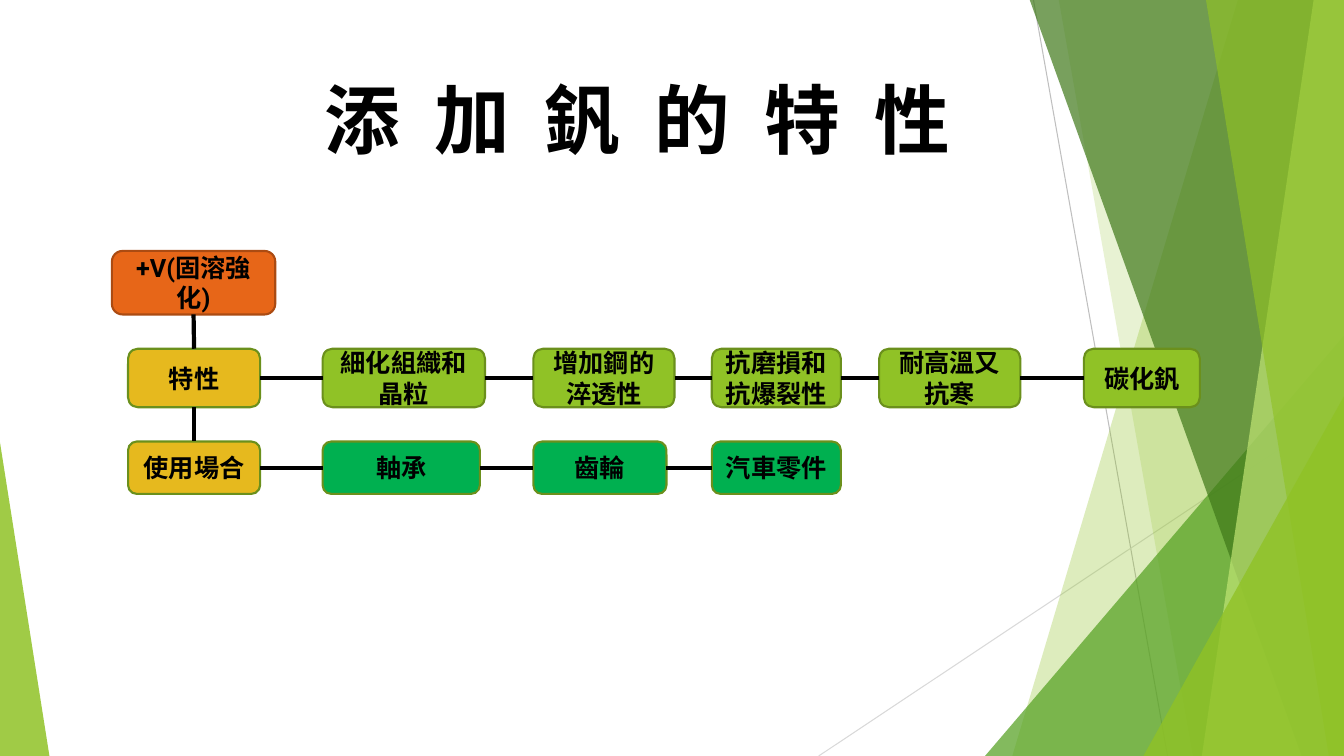
from lxml import etree
from pptx import Presentation
from pptx.dml.color import RGBColor
from pptx.enum.shapes import MSO_CONNECTOR, MSO_SHAPE
from pptx.enum.text import MSO_ANCHOR, MSO_AUTO_SIZE, PP_ALIGN
from pptx.oxml.ns import qn
from pptx.util import Inches, Pt

COLORS = {
    "black": "000000", "gray": "BFBFBF", "pale gray": "D9D9D9",
    "lime": "90C226", "light lime": "C0E474", "green": "54A021",
    "dark green": "3F7819", "lime edge": "6B901C", "gold": "E6B91E",
    "emerald": "00B050", "orange": "E76618", "orange edge": "AB4B12",
}
TOP, RIGHT, BOTTOM, LEFT = -0.01, 13.33, 7.5, 0
SITE_TOP, SITE_LEFT, SITE_BOTTOM, SITE_RIGHT = range(4)

deck = Presentation()
deck.slide_width, deck.slide_height = Inches(13.33), Inches(7.5)
page = deck.slides.add_slide(deck.slide_layouts[5])


def paint(shape, color, opacity=100, edge=None):
    """Fill a shape, with an opacity in percent and an optional outline."""
    shape.shadow.inherit = False
    shape.fill.solid()
    shape.fill.fore_color.rgb = RGBColor.from_string(COLORS[color])
    if opacity < 100:
        tint = shape.fill._xPr.find(qn("a:solidFill"))[0]
        etree.SubElement(tint, qn("a:alpha"), val=str(opacity * 1000))
    if edge:
        shape.line.color.rgb = RGBColor.from_string(COLORS[edge])
        shape.line.width = Pt(1.5)
    else:
        shape.line.fill.background()


def add_line(start, end, color, width):
    line = page.shapes.add_connector(
        MSO_CONNECTOR.STRAIGHT, *(Inches(value) for value in start + end))
    line.line.color.rgb = RGBColor.from_string(COLORS[color])
    line.line.width = Pt(width)
    etree.SubElement(line._element.spPr, qn("a:effectLst"))
    return line


# Backdrop: thin lines, then overlapping translucent facets
add_line((10.25, 0), (11.58, BOTTOM), "gray", 0.75)
add_line((RIGHT, 4.03), (8.12, BOTTOM), "pale gray", 0.75)

# A band has its left corners at (top x, bottom x) and runs to the right edge;
# a triangle has left, top, width and its apex side.
facets = [
    ("band", (12.28, 10.04), "lime", 30),
    ("band", (10.5, 11.83), "lime", 20),
    ("triangle", (9.77, 3.33, 3.56, 1), "green", 72),
    ("band", (10.21, 12.91), "dark green", 70),
    ("band", (13.03, 11.92), "light lime", 70),
    ("band", (11.96, 13.18), "lime", 65),
    ("triangle", (11.34, 3.93, 1.99, 1), "lime", 80),
    ("triangle", (LEFT, 4.39, 0.49, 0), "lime", 85),
]
for kind, geometry, color, opacity in facets:
    if kind == "band":
        top_x, bottom_x = geometry
        outline = page.shapes.build_freeform(Inches(top_x), Inches(TOP))
        corners = [(RIGHT, TOP), (RIGHT, BOTTOM), (bottom_x, BOTTOM)]
        outline.add_line_segments([(Inches(x), Inches(y)) for x, y in corners])
        facet = outline.convert_to_shape()
    else:
        left, top, width, apex = geometry
        facet = page.shapes.add_shape(
            MSO_SHAPE.ISOSCELES_TRIANGLE, Inches(left), Inches(top),
            Inches(width), Inches(BOTTOM - top))
        facet.adjustments[0] = apex
    paint(facet, color, opacity)

# Title
title = page.shapes.title
title.left, title.top = Inches(0), Inches(0.67)
title.width, title.height = Inches(12.64), Inches(1.44)
title.text_frame.auto_size = MSO_AUTO_SIZE.NONE
title.text_frame.vertical_anchor = MSO_ANCHOR.TOP
para = title.text_frame.paragraphs[0]
para.alignment = PP_ALIGN.CENTER
span = para.add_run()
span.text = "添  加  釩  的  特  性"
span.font.name, span.font.size, span.font.bold = "Times New Roman", Pt(54), True
span.font.color.rgb = RGBColor.from_string(COLORS["black"])

# Diagram rows: top, height, then boxes as (text, left, width, fill)
rows = [
    (2.49, 0.63, [("+V(固溶強化)", 1.11, 1.62, "orange")]),
    (3.46, 0.58, [("特性", 1.27, 1.31, "gold"),
                  ("細化組織和晶粒", 3.2, 1.61, "lime"),
                  ("增加鋼的淬透性", 5.29, 1.4, "lime"),
                  ("抗磨損和抗爆裂性", 7.06, 1.28, "lime"),
                  ("耐高溫又抗寒", 8.72, 1.4, "lime"),
                  ("碳化釩", 10.75, 1.15, "lime")]),
    (4.38, 0.52, [("使用場合", 1.27, 1.31, "gold"),
                  ("軸承", 3.2, 1.56, "emerald"),
                  ("齒輪", 5.29, 1.32, "emerald"),
                  ("汽車零件", 7.06, 1.28, "emerald")]),
]
links = []
row_head = None
for top, height, entries in rows:
    previous = None
    for text, left, width, fill in entries:
        box = page.shapes.add_shape(
            MSO_SHAPE.ROUNDED_RECTANGLE, Inches(left), Inches(top),
            Inches(width), Inches(height))
        paint(box, fill, edge="orange edge" if fill == "orange" else "lime edge")
        box.text_frame.word_wrap = True
        box.text_frame.vertical_anchor = MSO_ANCHOR.MIDDLE
        para = box.text_frame.paragraphs[0]
        para.alignment = PP_ALIGN.CENTER
        span = para.add_run()
        span.text = text
        span.font.name, span.font.size, span.font.bold = "Roboto", Pt(18), True
        span.font.color.rgb = RGBColor.from_string(COLORS["black"])
        if previous:
            links.append((previous, SITE_RIGHT, box, SITE_LEFT))
        else:
            if row_head:
                links.append((row_head, SITE_BOTTOM, box, SITE_TOP))
            row_head = box
        previous = box

for source, source_site, target, target_site in links:
    link = add_line((0, 0), (1, 1), "black", 3)
    link.begin_connect(source, source_site)
    link.end_connect(target, target_site)

deck.save("out.pptx")
